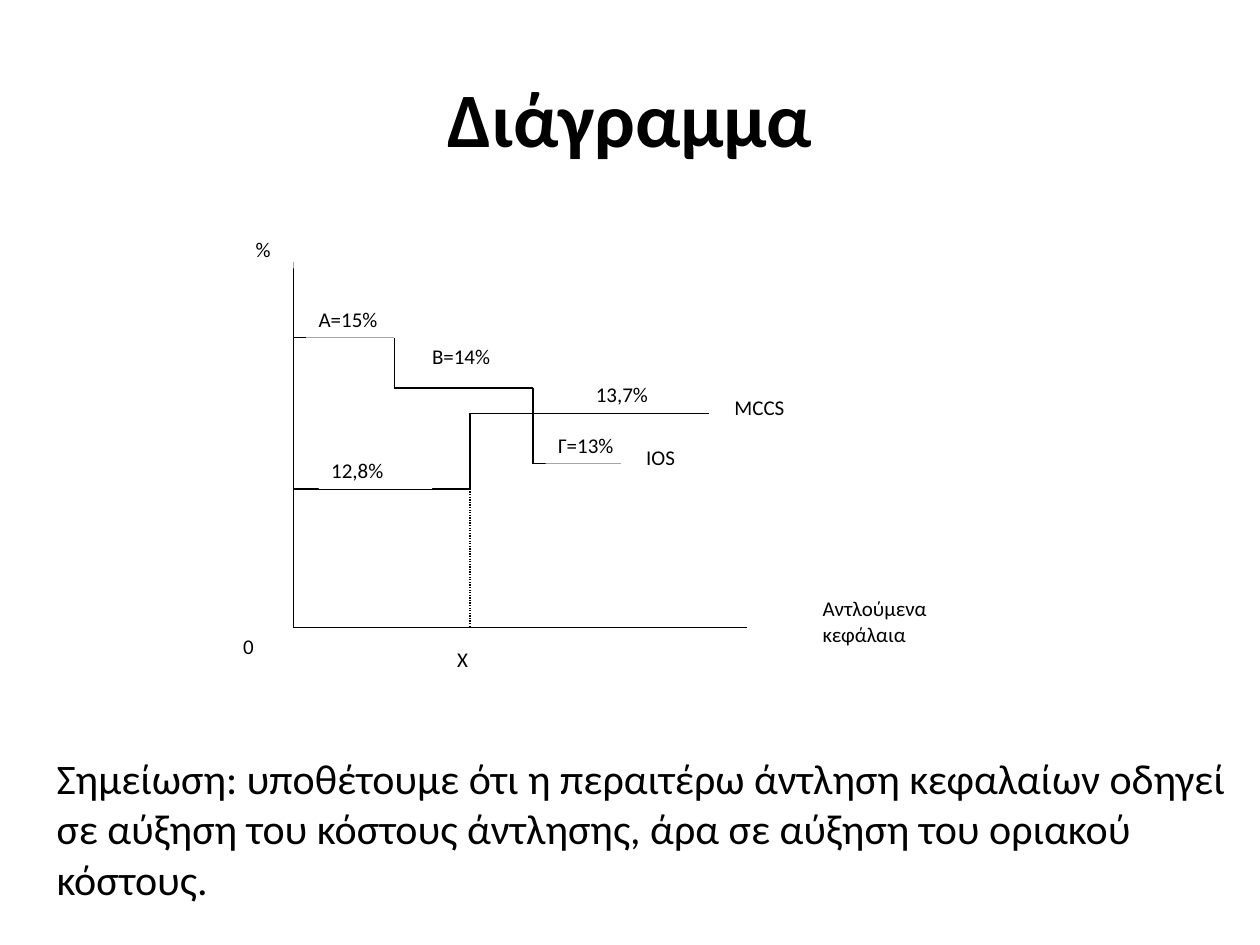
"""Build the slide with the step diagram of returns and marginal cost."""
from lxml import etree
from pptx import Presentation
from pptx.dml.color import RGBColor
from pptx.enum.dml import MSO_LINE
from pptx.enum.shapes import MSO_CONNECTOR, MSO_SHAPE
from pptx.enum.text import MSO_ANCHOR, PP_ALIGN
from pptx.oxml.ns import qn
from pptx.util import Cm, Pt

STRAIGHT = MSO_CONNECTOR.STRAIGHT
RECT = MSO_SHAPE.RECTANGLE
DOTS = MSO_LINE.ROUND_DOT
TOP, MIDDLE = MSO_ANCHOR.TOP, MSO_ANCHOR.MIDDLE
LEFT, CENTER = PP_ALIGN.LEFT, PP_ALIGN.CENTER
BLACK = RGBColor(0, 0, 0)
WHITE = RGBColor(255, 255, 255)
FONT = "Calibri"

UNIT = Cm(2.54) / 10
ZERO_X, ZERO_Y = Cm(5.92), Cm(12.65)

AXES = [(0, 29), (0, 0), (36, 0)]
IOS = [(0, 23), (8, 23), (8, 19), (19, 19), (19, 13), (26, 13)]
COST = [(0, 11), (14, 11), (14, 17)]
RISE = [(14, 17), (33, 17)]
DROP = [(14, 11), (14, 0)]

LABELS = [
    ("%", -4, 31.5, 4),
    ("Α=15%", 1, 26, 8),
    ("Β=14%", 10, 23, 8),
    ("Γ=13%", 20, 16, 8),
    ("12,8%", 2, 14, 9),
    ("13,7%", 23, 20, 8),
    ("MCCS", 34, 19, 7),
    ("IOS", 27, 15, 6),
    ("0", -5, 0, 3),
    ("Χ", 12, -1, 8),
    ("Αντλούμενα\nκεφάλαια", 41, 3, 13),
]
NOTE = ("Σημείωση: υποθέτουμε ότι η περαιτέρω άντληση κεφαλαίων οδηγεί "
        "σε αύξηση του κόστους άντλησης, άρα σε αύξηση του οριακού κόστους.")


def place(x, y):
    """Turn diagram units into a point on the slide."""
    return round(ZERO_X + x * UNIT), round(ZERO_Y - y * UNIT)


def write(shape, text, size, align=LEFT, anchor=TOP, bold=False):
    """Fill a shape with styled text."""
    frame = shape.text_frame
    frame.word_wrap = True
    frame.vertical_anchor = anchor
    frame.text = text
    for par in frame.paragraphs:
        par.alignment = align
        font = par.font
        font.name, font.size, font.bold = FONT, Pt(size), bold
        font.color.rgb = BLACK


def add_path(slide, points, dash=None):
    """Draw straight lines through the points."""
    for start, end in zip(points, points[1:]):
        line = slide.shapes.add_connector(STRAIGHT, *place(*start), *place(*end))
        line.line.color.rgb = BLACK
        line.line.width = Pt(0.75)
        if dash:
            line.line.dash_style = dash
        etree.SubElement(line._element.spPr, qn("a:effectLst"))


def add_label(slide, text, x, y, width):
    """Add a white label whose height follows its line count."""
    height = 1 + 2 * len(text.split("\n"))
    box = slide.shapes.add_shape(
        RECT, *place(x, y), round(width * UNIT), round(height * UNIT))
    box.shadow.inherit = False
    box.fill.solid()
    box.fill.fore_color.rgb = WHITE
    box.line.fill.background()
    write(box, text, 12)


def add_text(slide, text, area, size, **style):
    """Add a text box over an area given in centimetres."""
    box = slide.shapes.add_textbox(*(Cm(n) for n in area))
    write(box, text, size, **style)


def main():
    """Build and save the slide."""
    deck = Presentation()
    deck.slide_width, deck.slide_height = Cm(25.4), Cm(19.05)
    slide = deck.slides.add_slide(deck.slide_layouts[6])
    add_text(slide, "Διάγραμμα", (1.27, 0.76, 22.86, 3.18), 44,
             align=CENTER, anchor=MIDDLE, bold=True)
    for points in (AXES, IOS, COST):
        add_path(slide, points)
    for label in LABELS:
        add_label(slide, *label)
    add_path(slide, RISE)
    add_path(slide, DROP, DOTS)
    add_text(slide, NOTE, (0.89, 15.04, 24.51, 3.33), 24)
    deck.save("out.pptx")


if __name__ == "__main__":
    main()
